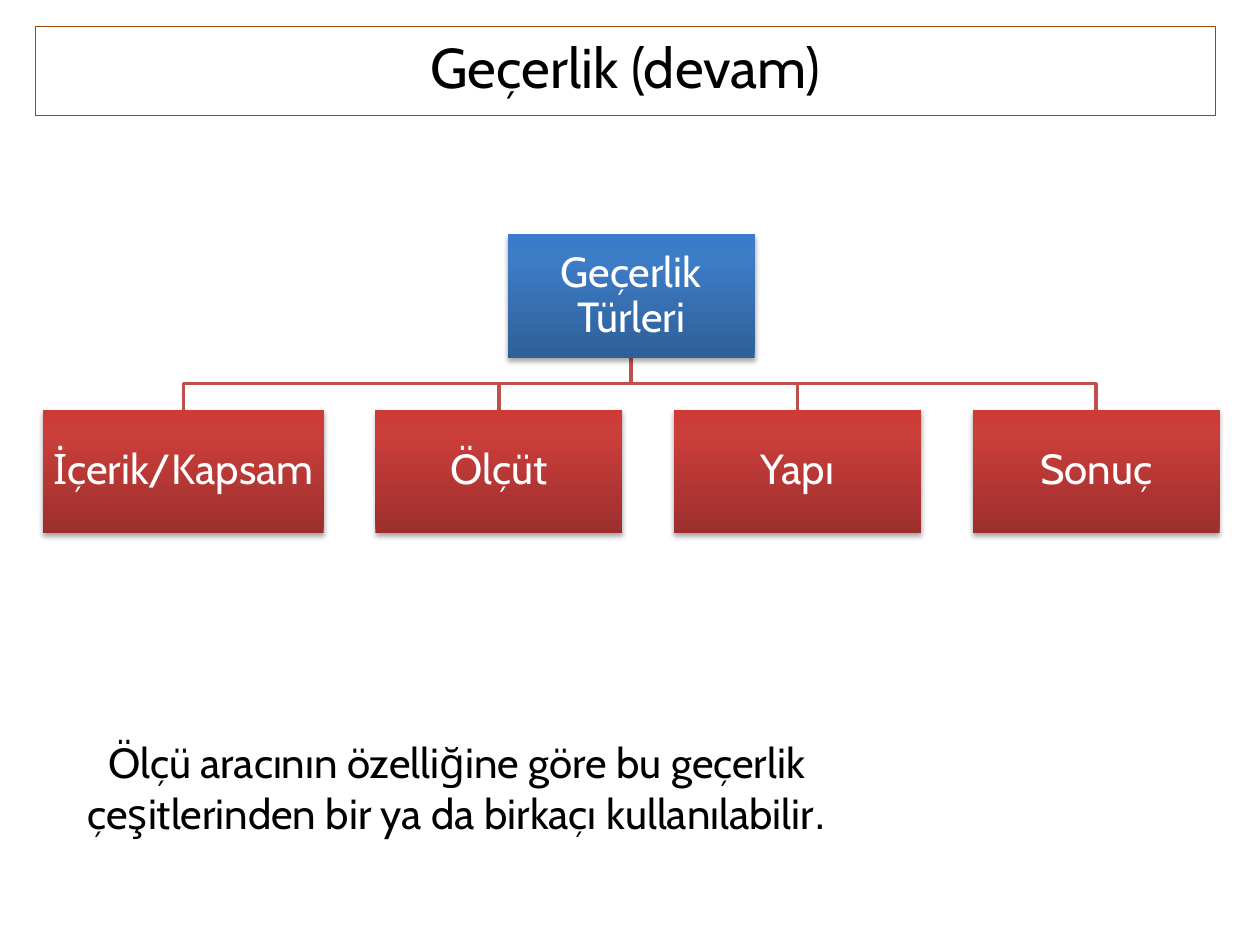
from lxml.etree import SubElement
from pptx import Presentation
from pptx.dml.color import RGBColor
from pptx.enum.shapes import MSO_SHAPE
from pptx.enum.text import MSO_ANCHOR, PP_ALIGN
from pptx.oxml.ns import qn
from pptx.util import Inches, Pt

TITLE = "Geçerlik (devam)"
ROOT = "Geçerlik Türleri"
TYPES = [("İçerik/Kapsam", 2.23), ("Ölçüt", 1.96), ("Yapı", 1.96), ("Sonuç", 1.96)]
NOTE = [
    ("Ölçü aracının özelliğine göre bu geçerlik çeşitlerinden bir ya da birkaçı kullanılabilir", "Cabin"),
    (".", "Arial"),
]

WHITE = RGBColor(0xFF, 0xFF, 0xFF)
BLACK = RGBColor(0x00, 0x00, 0x00)
BROWN = RGBColor(0x98, 0x48, 0x07)
BRANCH_RED = RGBColor(0xC0, 0x50, 0x4D)
BLUES = [RGBColor(0x2F, 0x5F, 0x99), RGBColor(0x3D, 0x7C, 0xC7), RGBColor(0x3A, 0x7C, 0xCB)]
REDS = [RGBColor(0x9C, 0x2F, 0x2D), RGBColor(0xCB, 0x3E, 0x3A), RGBColor(0xCE, 0x3B, 0x37)]
STOPS = [0, 80, 100]

LEFT, GAP = 0.34, 0.41
ROOT_TOP, TYPES_TOP = 1.86, 3.25
ROOT_WIDTH, BOX_HEIGHT = 1.96, 0.98


def add_element(parent, tag, **attributes):
    return SubElement(parent, qn(tag), {key: str(value) for key, value in attributes.items()})


def shade(box, colors):
    box.fill.gradient()
    box.fill.gradient_angle = 90
    stop_list = box.fill._xPr.find(qn("a:gradFill")).find(qn("a:gsLst"))
    for stop in list(stop_list):
        stop_list.remove(stop)
    for position, color in zip(STOPS, colors):
        stop = add_element(stop_list, "a:gs", pos=position * 1000)
        add_element(stop, "a:srgbClr", val=color)


def cast_shadow(box):
    box.shadow.inherit = False
    effects = box._element.spPr.find(qn("a:effectLst"))
    shadow = add_element(effects, "a:outerShdw", blurRad=Pt(3.1), dist=Pt(1.8),
                         dir=5400000, rotWithShape=0)
    add_element(add_element(shadow, "a:srgbClr", val="000000"), "a:alpha", val=35000)


def add_branch(slide, start_x, end_x):
    start_y = ROOT_TOP + BOX_HEIGHT
    middle_y = (start_y + TYPES_TOP) / 2
    builder = slide.shapes.build_freeform(Inches(start_x), Inches(start_y))
    corners = [(start_x, middle_y), (end_x, middle_y), (end_x, TYPES_TOP)]
    builder.add_line_segments([(Inches(x), Inches(y)) for x, y in corners], close=False)
    branch = builder.convert_to_shape()
    branch.shadow.inherit = False
    branch.fill.background()
    branch.line.color.rgb = BRANCH_RED
    branch.line.width = Pt(2)


def add_box(slide, text, left, top, width, colors):
    box = slide.shapes.add_shape(MSO_SHAPE.RECTANGLE, Inches(left), Inches(top),
                                 Inches(width), Inches(BOX_HEIGHT))
    shade(box, colors)
    box.line.fill.background()
    cast_shadow(box)
    frame = box.text_frame
    frame.margin_left = frame.margin_right = Inches(0.02)
    frame.margin_top = frame.margin_bottom = Inches(0.02)
    frame.vertical_anchor = MSO_ANCHOR.MIDDLE
    write(frame, [(text, "Cabin")], 24, WHITE)
    frame.paragraphs[0].line_spacing = 0.9


def write(frame, parts, size, color):
    frame.word_wrap = True
    paragraph = frame.paragraphs[0]
    paragraph.alignment = PP_ALIGN.CENTER
    paragraph.font.size = Pt(size)
    paragraph.font.color.rgb = color
    for text, font_name in parts:
        run = paragraph.add_run()
        run.text = text
        run.font.name = font_name


def main():
    deck = Presentation()
    deck.slide_width, deck.slide_height = Inches(10), Inches(7.5)
    slide = deck.slides.add_slide(deck.slide_layouts[6])

    lefts = [LEFT + sum(width + GAP for _, width in TYPES[:i]) for i in range(len(TYPES))]
    root_center = (LEFT + lefts[-1] + TYPES[-1][1]) / 2

    for left, (_, width) in zip(lefts, TYPES):
        add_branch(slide, root_center, left + width / 2)
    add_box(slide, ROOT, root_center - ROOT_WIDTH / 2, ROOT_TOP, ROOT_WIDTH, BLUES)
    for left, (name, width) in zip(lefts, TYPES):
        add_box(slide, name, left, TYPES_TOP, width, REDS)

    title = slide.shapes.add_textbox(Inches(0.28), Inches(0.21), Inches(9.37), Inches(0.71))
    title.line.color.rgb = BROWN
    title.line.width = Pt(0.75)
    write(title.text_frame, [(TITLE, "Cabin")], 32, BLACK)

    note = slide.shapes.add_textbox(Inches(0.28), Inches(5.8), Inches(6.69), Inches(0.9))
    write(note.text_frame, NOTE, 24, BLACK)

    deck.save("out.pptx")


if __name__ == "__main__":
    main()
